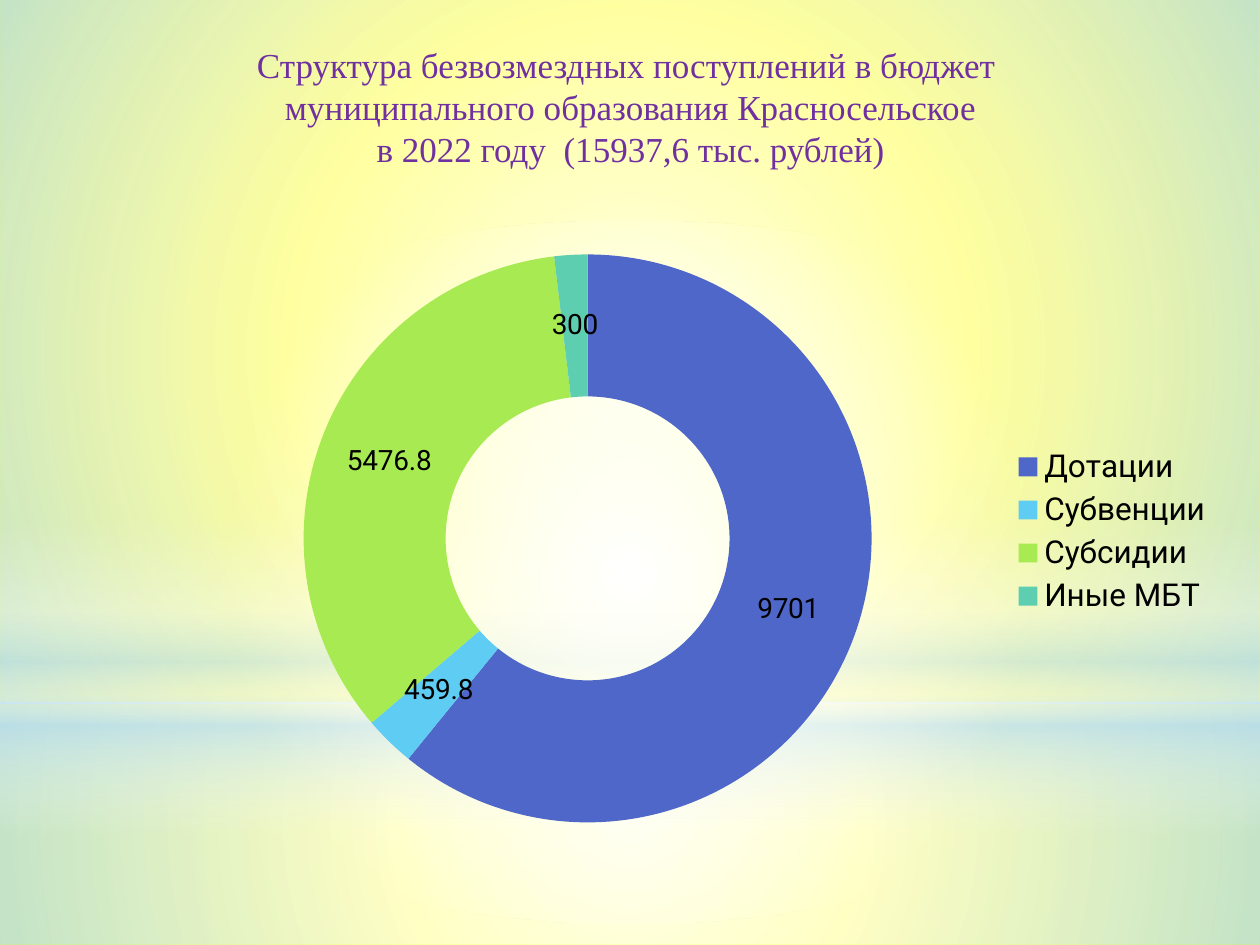
"""Build a slide with a doughnut chart of budget transfers."""
from lxml import etree
from pptx import Presentation
from pptx import util as u
from pptx.chart.data import CategoryChartData
from pptx.dml.color import RGBColor
from pptx.enum import chart as charts, shapes, text
from pptx.oxml import parse_xml
from pptx.oxml.ns import nsdecls, qn

COLORS = {
    "background": "FFFF00", "white": "FFFFFF", "sky": "B4DCFA",
    "title": "7030A0", "label": "000000",
    "Дотации": "4E67C8", "Субвенции": "5ECCF3",
    "Субсидии": "A7EA52", "Иные МБТ": "5DCEAF",
}
VALUES = {"Дотации": 9701, "Субвенции": 459.8, "Субсидии": 5476.8, "Иные МБТ": 300}
TITLE = [
    "Структура безвозмездных поступлений в бюджет ",
    "муниципального образования Красносельское",
    "в 2022 году  (15937,6 тыс. рублей)",
]
RADIAL = ('<a:path path="circle"><a:fillToRect l="50000" t="50000" '
          'r="50000" b="50000"/></a:path>')
VERTICAL = '<a:lin ang="5400000" scaled="0"/>'
RECTANGLE, OVAL = shapes.MSO_SHAPE.RECTANGLE, shapes.MSO_SHAPE.OVAL
GLOWS = [
    (RECTANGLE, 0.744, 0.256, RADIAL,
     [(0, "white", 91), (37, "white", 76), (100, "sky", 79)]),
    (RECTANGLE, 0, 0.744, RADIAL,
     [(0, "white", 89), (48, "white", 62), (100, "sky", 79)]),
    (RECTANGLE, 0.55, 0.333, VERTICAL,
     [(0, "white", 0), (29, "white", 30), (45, "sky", 40),
      (55, "white", 26), (65, "sky", 60), (100, "white", 0)]),
    (OVAL, 0.233, 0.744, RADIAL, [(0, "white", 100), (56, "white", 0)]),
]


def write(paragraph, content, size, font, color, align):
    paragraph.alignment = align
    paragraph.space_before = u.Pt(0)
    paragraph.line_spacing = 1.0
    span = paragraph.add_run()
    span.text = content
    span.font.size = u.Pt(size)
    span.font.name = font
    span.font.bold = False
    span.font.color.rgb = RGBColor.from_string(COLORS[color])


deck = Presentation()
deck.slide_width, deck.slide_height = u.Inches(10), u.Inches(7.5)
width, height = deck.slide_width, deck.slide_height
page = deck.slides.add_slide(deck.slide_layouts[5])
page.background.fill.solid()
page.background.fill.fore_color.rgb = RGBColor.from_string(COLORS["background"])

for kind, top, share, direction, stops in GLOWS:
    glow = page.shapes.add_shape(kind, 0, int(top * height), width, int(share * height))
    glow.shadow.inherit = False
    glow.line.fill.background()
    glow.fill.background()
    stop_list = "".join(
        f'<a:gs pos="{place * 1000}"><a:srgbClr val="{COLORS[color]}">'
        f'<a:alpha val="{opacity * 1000}"/></a:srgbClr></a:gs>'
        for place, color, opacity in stops)
    gradient = parse_xml(f'<a:gradFill {nsdecls("a")} rotWithShape="1">'
                         f'<a:gsLst>{stop_list}</a:gsLst>{direction}</a:gradFill>')
    properties = glow._element.spPr
    properties.replace(properties.find(qn("a:noFill")), gradient)

title = page.shapes.title
page.shapes._spTree.append(title._element)
title.left, title.top = int(0.028 * width), int(0.039 * height)
title.width, title.height = int(0.945 * width), int(0.193 * height)
frame = title.text_frame
frame.word_wrap = True
frame.auto_size = text.MSO_AUTO_SIZE.NONE
frame.vertical_anchor = text.MSO_ANCHOR.TOP
for index, line in enumerate(TITLE):
    para = frame.add_paragraph() if index else frame.paragraphs[0]
    write(para, line, size=20, font="Times New Roman", color="title",
          align=text.PP_ALIGN.CENTER)

data = CategoryChartData()
data.categories = list(VALUES)
data.add_series("Series 1", list(VALUES.values()))
chart = page.shapes.add_chart(
    charts.XL_CHART_TYPE.DOUGHNUT, int(0.107 * width), int(0.196 * height),
    int(0.866 * width), int(0.733 * height), data).chart
chart.has_title = False
chart.font.size = u.Pt(18)
chart.font.name = "Roboto"
chart.font.color.rgb = RGBColor.from_string(COLORS["label"])
chart.has_legend = True
chart.legend.position = charts.XL_LEGEND_POSITION.RIGHT
chart.legend.include_in_layout = False

plot = chart.plots[0]
plot.vary_by_categories = True
plot.has_data_labels = True
labels = plot.data_labels
labels.show_value = True
labels.show_percentage = False
labels.number_format, labels.number_format_is_linked = "General", False
labels.font.size = u.Pt(16)
labels.font.name = "Roboto"
labels.font.color.rgb = RGBColor.from_string(COLORS["label"])
for index, name in enumerate(VALUES):
    slice_format = plot.series[0].points[index].format
    slice_format.fill.solid()
    slice_format.fill.fore_color.rgb = RGBColor.from_string(COLORS[name])
    slice_format.line.fill.background()

area = chart._chartSpace.chart.plotArea
for old in area.findall(qn("c:layout")):
    area.remove(old)
layout = etree.Element(qn("c:layout"))
manual = etree.SubElement(layout, qn("c:manualLayout"))
for tag, value in [("layoutTarget", "inner"), ("xMode", "edge"), ("yMode", "edge"),
                   ("x", 0.08), ("y", 0.1), ("w", 0.67), ("h", 0.82)]:
    etree.SubElement(manual, qn(f"c:{tag}")).set("val", str(value))
area.insert(0, layout)

deck.save("out.pptx")
